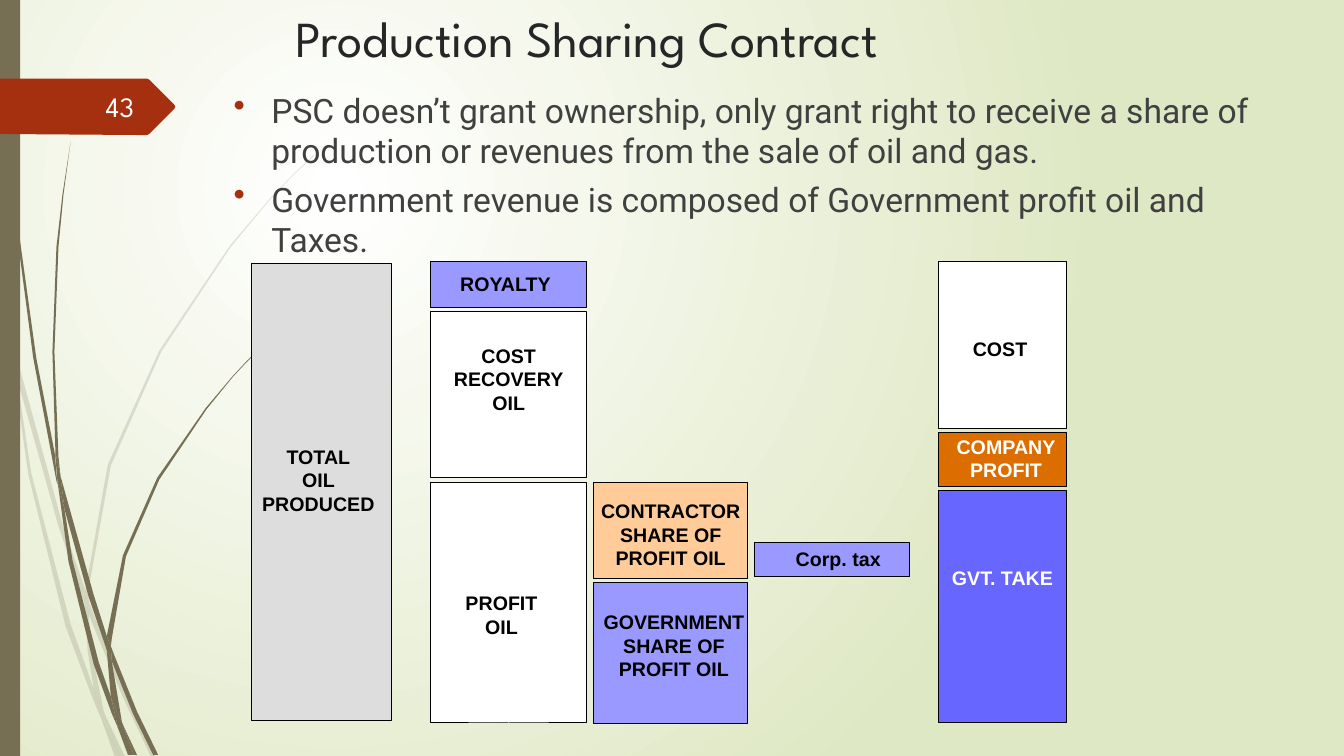
import pptx
import pptx.dml.color
import pptx.enum.shapes
import pptx.enum.text
import pptx.oxml
import pptx.oxml.ns
import pptx.util
from lxml import etree

Cm = pptx.util.Cm
Pt = pptx.util.Pt
RGB = pptx.dml.color.RGBColor
qn = pptx.oxml.ns.qn
ALIGN = pptx.enum.text.PP_ALIGN
RECT = pptx.enum.shapes.MSO_SHAPE.RECTANGLE

BLACK = RGB(0x00, 0x00, 0x00)
WHITE = RGB(0xFF, 0xFF, 0xFF)
PALE_GREEN = RGB(0xDF, 0xE8, 0xC4)
OLIVE = RGB(0x76, 0x6F, 0x54)
RED = RGB(0xA5, 0x30, 0x10)
GREY = RGB(0xDD, 0xDD, 0xDD)
LILAC = RGB(0x99, 0x99, 0xFF)
VIOLET = RGB(0x67, 0x67, 0xFF)
PEACH = RGB(0xFF, 0xCC, 0x99)
ORANGE = RGB(0xDC, 0x6E, 0x00)
TITLE_INK = RGB(0x26, 0x26, 0x26)
BODY_INK = RGB(0x40, 0x40, 0x40)
NUMBER_INK = RGB(0xFE, 0xFF, 0xFF)

GRID = Cm(0.0254)  # unit of the outline points below

PALE_STEMS = [
    [(11, 350), (9, 322), (0, 282), (0, 299), (10, 344)],
    [(58, 522), (84, 599), (85, 586), (62, 520), (14, 345), (17, 376)],
    [(92, 607), (88, 596), (88, 610), (123, 694), (150, 751), (155, 751), (127, 692)],
    [(119, 751), (124, 751), (105, 711)],
    [(93, 683), (70, 619), (31, 469), (17, 376), (11, 350), (28, 470), (65, 621),
     (92, 693), (101, 714), (99, 707)],
    [(84, 599), (87, 646), (93, 683), (96, 692), (105, 711), (103, 706), (91, 646),
     (88, 610), (88, 608)],
    [(88, 584), (110, 462), (160, 349), (229, 245), (268, 198), (290, 175), (312, 154),
     (312, 153), (289, 175), (268, 197), (228, 244), (158, 348), (107, 461), (85, 584),
     (85, 586), (88, 596)],
    [(101, 714), (114, 751), (119, 751)],
    [(88, 608), (88, 610), (88, 596), (85, 586), (84, 599)],
    [(96, 692), (93, 683), (99, 707), (101, 714), (119, 751), (105, 711)],
]
DARK_STEMS = [
    [(7, 110), (17, 233), (33, 355), (56, 477), (57, 481), (55, 457), (55, 453),
     (36, 355), (19, 232), (8, 109), (5, 48), (4, 0), (3, 0), (4, 48)],
    [(88, 592), (106, 645), (106, 633), (106, 631), (93, 590), (60, 472), (64, 505)],
    [(113, 649), (110, 641), (111, 656), (132, 708), (152, 749), (157, 749), (136, 706)],
    [(110, 691), (98, 657), (72, 556), (64, 505), (57, 477), (68, 557), (93, 659),
     (111, 708), (117, 722), (116, 717)],
    [(60, 472), (58, 453), (54, 349), (58, 245), (63, 193), (70, 141), (62, 193),
     (56, 245), (52, 349), (55, 449)],
    [(133, 749), (136, 749), (122, 719)],
    [(57, 477), (64, 505), (60, 472), (55, 449), (55, 453)],
    [(111, 633), (125, 552), (158, 476), (205, 406), (231, 374), (245, 359), (261, 344),
     (260, 344), (245, 358), (231, 373), (204, 405), (156, 474), (122, 551), (106, 631),
     (110, 641)],
    [(117, 722), (127, 749), (131, 749)],
    [(106, 645), (110, 691), (116, 706), (122, 719), (121, 716), (111, 656), (109, 651)],
    [(106, 645), (109, 651), (111, 656), (110, 641), (106, 631), (106, 633)],
    [(116, 706), (110, 691), (116, 717), (117, 722), (130, 749), (133, 749), (122, 719)],
]
NUMBER_TAG = [(173, 108), (148, 133), (146, 134), (136, 134), (0, 133), (0, 78),
              (146, 78), (148, 79), (173, 104), (174, 106)]

# left edge and width of each column of the diagram, in cm
TOTAL, SPLIT, SHARES, TAX, RESULT = (
    (6.35, 3.51), (10.85, 3.94), (14.96, 3.89), (19.02, 3.89), (23.65, 3.23))

# column, top, height, fill, text colour, text drop, sideways text shift, label
BLOCKS = [
    (SPLIT, 6.6, 1.14, LILAC, BLACK, 0.25, -0.08, "ROYALTY"),
    (SPLIT, 7.85, 4.19, WHITE, BLACK, 0.81, 0, "COST\nRECOVERY\nOIL"),
    (SPLIT, 12.17, 6.05, WHITE, BLACK, 2.72, -0.18, "PROFIT\nOIL"),
    (SHARES, 12.17, 2.41, PEACH, BLACK, 0.41, 0, "CONTRACTOR\nSHARE OF\nPROFIT OIL"),
    (SHARES, 14.68, 3.56, LILAC, BLACK, 0.69, 0.08, "GOVERNMENT\nSHARE OF\nPROFIT OIL"),
    (TOTAL, 6.63, 11.53, GREY, BLACK, 4.58, -0.08, "TOTAL\nOIL\nPRODUCED"),
    (TAX, 13.67, 0.86, LILAC, BLACK, 0.1, 0.16, "Corp. tax"),
    (RESULT, 12.37, 5.84, VIOLET, WHITE, 1.9, 0, "GVT. TAKE"),
    (RESULT, 6.6, 4.19, WHITE, BLACK, 1.88, -0.06, "COST"),
    (RESULT, 10.9, 1.35, ORANGE, WHITE, 0.05, 0.09, "COMPANY\nPROFIT"),
]


def add_outline(s, points, color):
    builder = s.shapes.build_freeform(*points[0], scale=GRID)
    builder.add_line_segments(points[1:], close=True)
    sp = builder.convert_to_shape()
    sp.shadow.inherit = False
    sp.fill.solid()
    sp.fill.fore_color.rgb = color
    sp.line.fill.background()
    return sp


def add_text(s, box, text, font, size, color):
    tf = s.shapes.add_textbox(*(Cm(n) for n in box)).text_frame
    tf.word_wrap = True
    tf.text = text
    for p in tf.paragraphs:
        p.font.name = font
        p.font.size = Pt(size)
        p.font.color.rgb = color
    return tf


prs = pptx.Presentation()
prs.slide_width, prs.slide_height = Cm(33.87), Cm(19.05)
s = prs.slides.add_slide(prs.slide_layouts[6])

# Background: radial gradient
fill = s.background.fill
fill.gradient()
for stop, color in zip(fill.gradient_stops, (WHITE, PALE_GREEN)):
    stop.color.rgb = color
grad = s.element.find(".//" + qn("a:gradFill"))
grad.remove(grad.find(qn("a:lin")))
radial = etree.SubElement(grad, qn("a:path"), path="circle")
etree.SubElement(radial, qn("a:fillToRect"), l="50000", t="50000", r="100000", b="100000")

# Grass, side bar and number tag
for points in PALE_STEMS:
    sp = add_outline(s, points, OLIVE)
    rgb = sp.element.spPr.find(".//" + qn("a:srgbClr"))
    etree.SubElement(rgb, qn("a:alpha"), val="20000")
for points in DARK_STEMS:
    add_outline(s, points, OLIVE)
bar = s.shapes.add_shape(RECT, 0, 0, Cm(0.51), prs.slide_height)
bar.shadow.inherit = False
bar.fill.solid()
bar.fill.fore_color.rgb = OLIVE
bar.line.fill.background()
add_outline(s, NUMBER_TAG, RED)

add_text(s, (7.21, 0.05, 24.77, 2.39), "Production Sharing Contract",
         "League Spartan", 36, TITLE_INK)

# Diagram
for (left, width), top, height, color, ink, drop, shift, label in BLOCKS:
    sp = s.shapes.add_shape(RECT, Cm(left), Cm(top), Cm(width), Cm(height))
    sp.shadow.inherit = False
    sp.fill.solid()
    sp.fill.fore_color.rgb = color
    sp.line.color.rgb = BLACK
    sp.line.width = Pt(0.75)
    tf = sp.text_frame
    tf.word_wrap = False
    tf.vertical_anchor = pptx.enum.text.MSO_ANCHOR.TOP
    tf.margin_top, tf.margin_bottom = Cm(drop), 0
    tf.margin_left, tf.margin_right = Cm(max(0, 2 * shift)), Cm(max(0, -2 * shift))
    tf.text = label
    for p in tf.paragraphs:
        p.alignment = ALIGN.CENTER
        p.font.name = "Arial"
        p.font.size = Pt(14)
        p.font.bold = True
        p.font.color.rgb = ink

# Bullets
tf = add_text(
    s, (5.64, 2.13, 27.38, 5.16),
    "PSC doesn’t grant ownership, only grant right to receive a share of production"
    " or revenues from the sale of oil and gas.\n"
    "Government revenue is composed of Government profit oil and Taxes.",
    "Roboto", 24, BODY_INK)
for p in tf.paragraphs:
    p.space_before = Pt(6)
    pPr = p._p.get_or_add_pPr()
    pPr.set("marL", str(Cm(0.95)))
    pPr.set("indent", str(-Cm(0.95)))
    bullet_color = pptx.oxml.parse_xml(
        f'<a:buClr {pptx.oxml.ns.nsdecls("a")}><a:srgbClr val="{RED}"/></a:buClr>')
    bullet = etree.Element(qn("a:buChar"), char="•")
    spacing = pPr.find(qn("a:spcBef"))
    spacing.addnext(bullet_color)
    bullet_color.addnext(bullet)

# Slide number
tf = add_text(s, (1.47, 2.18, 2.16, 1.02), "43", "League Spartan", 20, NUMBER_INK)
tf.vertical_anchor = pptx.enum.text.MSO_ANCHOR.MIDDLE
tf.paragraphs[0].alignment = ALIGN.RIGHT

prs.save("out.pptx")
